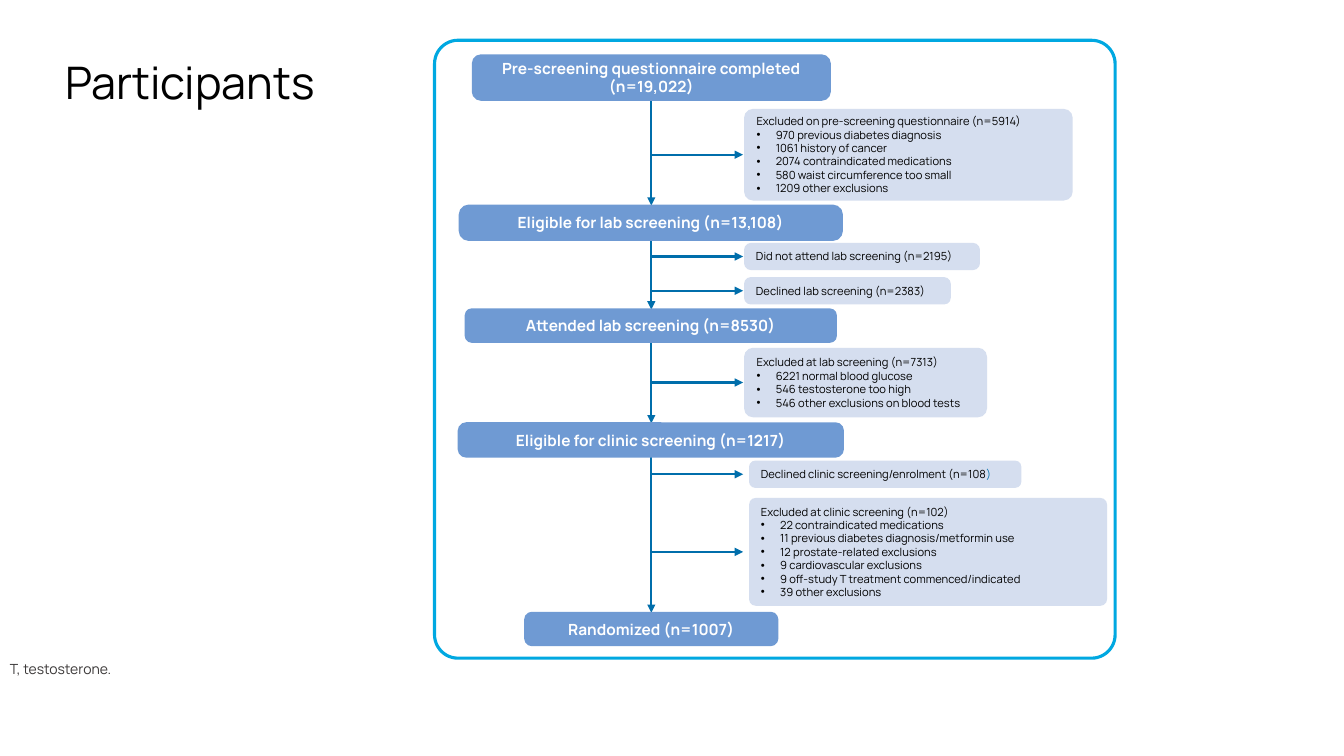
"""Build the participant flow slide."""
from lxml import etree
from pptx import Presentation
from pptx.dml.color import RGBColor
from pptx.enum.shapes import MSO_CONNECTOR, MSO_SHAPE
from pptx.enum.text import MSO_ANCHOR, PP_ALIGN
from pptx.oxml.ns import qn
from pptx.util import Inches, Pt

BLACK = RGBColor(0x00, 0x00, 0x00)
WHITE = RGBColor(0xFF, 0xFF, 0xFF)
GREY = RGBColor(0x3B, 0x38, 0x38)
CYAN = RGBColor(0x00, 0xA8, 0xE1)
BLUE = RGBColor(0x6F, 0x9A, 0xD3)
PALE = RGBColor(0xD5, 0xDE, 0xEF)
NAVY = RGBColor(0x00, 0x6E, 0xAB)
AXIS = 6.46
TIP = 7.37

stages = [
    (4.69, 0.55, 3.54, 0.44, 0.185, ["Pre-screening questionnaire completed", "(n=19,022)"]),
    (4.56, 2.04, 3.79, 0.34, 0.264, ["Eligible for lab screening (n=13,108)"]),
    (4.62, 3.07, 3.67, 0.32, 0.183, ["Attended lab screening (n=8530)"]),
    (4.55, 4.2, 3.81, 0.33, 0.224, ["Eligible for clinic screening (n=1217)"]),
    (5.21, 6.08, 2.5, 0.32, 0.203, ["Randomized (n=1007)"]),
]
losses = [
    (7.38, 1.08, 3.26, 0.91, 0.098, ["Excluded on pre-screening questionnaire (n=5914)"],
     ["970 previous diabetes diagnosis", "1061 history of cancer",
      "2074 contraindicated medications", "580 waist circumference too small",
      "1209 other exclusions"]),
    (7.38, 2.41, 2.34, 0.27, 0.255, ["Did not attend lab screening (n=2195)"], []),
    (7.38, 2.75, 2.05, 0.27, 0.239, ["Declined lab screening (n=2383)"], []),
    (7.38, 3.45, 2.41, 0.69, 0.129, ["Excluded at lab screening (n=7313)"],
     ["6221 normal blood glucose", "546 testosterone too high",
      "546 other exclusions on blood tests"]),
    (7.43, 4.57, 2.7, 0.27, 0.223, ["Declined clinic screening/enrolment (n=108", ")"], []),
    (7.43, 4.94, 3.55, 1.07, 0.061, ["Excluded at clinic screening (n=102)"],
     ["22 contraindicated medications", "11 previous diabetes diagnosis/metformin use",
      "12 prostate-related exclusions", "9 cardiovascular exclusions",
      "9 off-study T treatment commenced/indicated", "39 other exclusions"]),
]

deck = Presentation()
deck.slide_width, deck.slide_height = Inches(13.33), Inches(7.5)
slide = deck.slides.add_slide(deck.slide_layouts[6])
shapes = slide.shapes


def add_box(left, top, width, height, bend, fill, edge=None, weight=1.5):
    box = shapes.add_shape(MSO_SHAPE.ROUNDED_RECTANGLE, Inches(left), Inches(top),
                           Inches(width), Inches(height))
    box.adjustments[0] = bend
    box.shadow.inherit = False
    box.fill.solid()
    box.fill.fore_color.rgb = fill
    if edge is None:
        box.line.fill.background()
    else:
        box.line.color.rgb = edge
        box.line.width = Pt(weight)
    frame = box.text_frame
    frame.word_wrap = True
    frame.vertical_anchor = MSO_ANCHOR.MIDDLE
    frame.margin_top = frame.margin_bottom = 0
    return frame


def add_run(para, text, size, color, bold=False):
    run = para.add_run()
    run.text = text
    font = run.font
    font.name, font.size, font.bold = "Manrope", Pt(size), bold
    font.color.rgb = color


labels = [
    ("Participants", 0.55, 0.43, 11.63, 0.83, 32, BLACK, MSO_ANCHOR.MIDDLE),
    ("T, testosterone.", 0, 6.52, 13.33, 0.25, 10, GREY, MSO_ANCHOR.BOTTOM),
]
for text, left, top, width, height, size, color, anchor in labels:
    frame = shapes.add_textbox(Inches(left), Inches(top), Inches(width),
                               Inches(height)).text_frame
    frame.word_wrap = True
    frame.vertical_anchor = anchor
    para = frame.paragraphs[0]
    para.line_spacing = 0.9
    add_run(para, text, size, color)

add_box(4.31, 0.4, 6.75, 6.13, 0.038, WHITE, CYAN, 2.25)

arrows = [(AXIS, here[1] + here[3], AXIS, after[1])
          for here, after in zip(stages, stages[1:])]
arrows += [(AXIS, loss[1] + loss[3] / 2, TIP, loss[1] + loss[3] / 2) for loss in losses]
for ends in arrows:
    arrow = shapes.add_connector(MSO_CONNECTOR.STRAIGHT, *map(Inches, ends))
    arrow.line.color.rgb = NAVY
    arrow.line.width = Pt(1.5)
    etree.SubElement(arrow.line._get_or_add_ln(), qn("a:tailEnd"), type="triangle")
    etree.SubElement(arrow._element.spPr, qn("a:effectLst"))

for *place, lines in stages:
    para = add_box(*place, BLUE, BLUE).paragraphs[0]
    para.alignment = PP_ALIGN.CENTER
    for index, line in enumerate(lines):
        if index:
            para.add_line_break()
        add_run(para, line, 11, WHITE, True)

for *place, head, items in losses:
    frame = add_box(*place, PALE)
    para = frame.paragraphs[0]
    para.alignment = PP_ALIGN.LEFT
    for text, color in zip(head, (BLACK, NAVY)):
        add_run(para, text, 8, color)
    for item in items:
        para = frame.add_paragraph()
        para.alignment = PP_ALIGN.LEFT
        props = para._p.get_or_add_pPr()
        props.set("marL", str(Inches(0.19)))
        props.set("indent", str(Inches(-0.19)))
        etree.SubElement(props, qn("a:buFont"), typeface="Arial")
        etree.SubElement(props, qn("a:buChar"), char="•")
        add_run(para, item, 8, BLACK)

deck.save("out.pptx")
